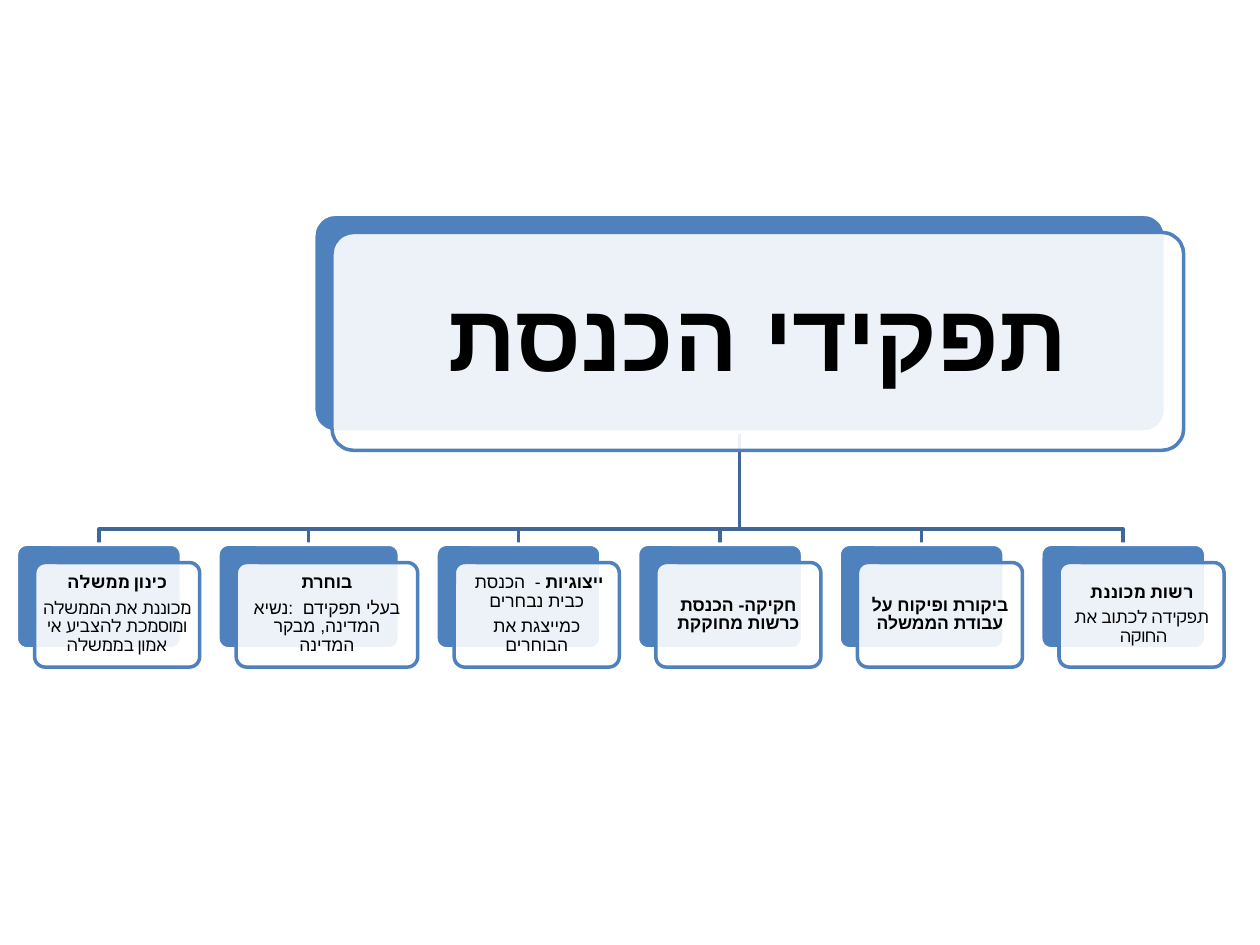
from dataclasses import dataclass

from lxml.etree import SubElement
from pptx import Presentation
from pptx.dml.color import RGBColor
from pptx.enum.shapes import MSO_SHAPE
from pptx.enum.text import MSO_ANCHOR, PP_ALIGN
from pptx.oxml.ns import qn
from pptx.util import Inches, Pt


@dataclass(frozen=True)
class Theme:
    """Hold the colours, type sizes and line width."""
    blue: RGBColor = RGBColor(0x4F, 0x81, 0xBD)
    wire: RGBColor = RGBColor(0x3F, 0x67, 0x97)
    white: RGBColor = RGBColor(0xFF, 0xFF, 0xFF)
    black: RGBColor = RGBColor(0, 0, 0)
    big: int = 54
    small: int = 10
    stroke: int = 2
    alpha: int = 90
    after: float = 0.35


THEME = Theme()
SHIFT = 0.145
ROOT = (2.49, 1.7, 6.76, 1.73)
LEFT, TOP, TALL, GAP = 0.13, 4.32, 0.83, 0.29
BUS = 4.2
TITLE = [(False, [("תפקידי הכנסת", True)])]
ROLES = [
    (1.31, "Calibri", [
        (True, [("כינון ממשלה", True)]),
        (True, [("מכוננת את הממשלה ומוסמכת להצביע אי אמון בממשלה", False)])]),
    (1.44, "Arial", [
        (True, [("בוחרת", True)]),
        (False, [("בעלי תפקידם  :נשיא המדינה, מבקר המדינה", False)])]),
    (1.31, "Arial", [
        (True, [("ייצוגיות ", True), ("-  הכנסת  כבית נבחרים", False)]),
        (True, [("כמייצגת את הבוחרים", False)])]),
    (1.31, "Arial", [(False, [("חקיקה- הכנסת כרשות מחוקקת", True)])]),
    (1.31, "Arial", [(False, [("ביקורת ופיקוח על עבודת הממשלה", True)])]),
    (1.31, "Calibri", [
        (True, [("רשות מכוננת", True)]),
        (True, [("תפקידה לכתוב את החוקה ", False)])]),
]


def apply(item, values):
    """Set each named value on the item."""
    for name, value in values.items():
        setattr(item, name, value)


def add_box(slide, area, fill, line):
    """Add a rounded box with a plain fill and outline."""
    box = slide.shapes.add_shape(MSO_SHAPE.ROUNDED_RECTANGLE, *map(Inches, area))
    box.adjustments[0] = 0.1
    box.shadow.inherit = False
    box.fill.solid()
    box.fill.fore_color.rgb = fill
    box.line.color.rgb = line
    box.line.width = Pt(THEME.stroke)
    return box


def add_text(box, paras, font, size, inset):
    """Write centred paragraphs into the box."""
    frame = box.text_frame
    sides = ("left", "top", "right", "bottom")
    apply(frame, {f"margin_{side}": Inches(inset) for side in sides})
    apply(frame, {"word_wrap": True, "vertical_anchor": MSO_ANCHOR.MIDDLE})
    for index, (rtl, runs) in enumerate(paras):
        para = frame.add_paragraph() if index else frame.paragraphs[0]
        apply(para, {"alignment": PP_ALIGN.CENTER, "line_spacing": 0.9,
                     "space_after": Pt(size * THEME.after)})
        if rtl:
            para._p.get_or_add_pPr().set("rtl", "1")
        for text, bold in runs:
            run = para.add_run()
            run.text = text
            apply(run.font, {"name": font, "size": Pt(size), "bold": bold})
            run.font.color.rgb = THEME.black
            SubElement(run.font._element, qn("a:cs"), typeface=font)


def add_card(slide, area, paras, font, size, inset):
    """Add a blue back box and a clear front box with text."""
    add_box(slide, area, THEME.blue, THEME.white)
    left, top, wide, tall = area
    front = add_box(slide, (left + SHIFT, top + SHIFT, wide, tall),
                    THEME.white, THEME.blue)
    shade = front.element.spPr.find(qn("a:solidFill"))[0]
    SubElement(shade, qn("a:alpha"), val=str(THEME.alpha * 1000))
    add_text(front, paras, font, size, inset)


def add_wire(slide, start, end):
    """Add a bent line from the root down to a card."""
    points = [(start[0], BUS), (end[0], BUS), end]
    pen = slide.shapes.build_freeform(*map(Inches, start))
    pen.add_line_segments([(Inches(x), Inches(y)) for x, y in points], close=False)
    wire = pen.convert_to_shape()
    wire.shadow.inherit = False
    wire.fill.background()
    wire.line.color.rgb = THEME.wire
    wire.line.width = Pt(THEME.stroke)


def lay_out():
    """Return the card areas from left to right."""
    areas, left = [], LEFT
    for wide, _, _ in ROLES:
        areas.append((left, TOP, wide, TALL))
        left += wide + GAP
    return areas


def main():
    """Build the chart of roles and save it."""
    deck = Presentation()
    apply(deck, {"slide_width": Inches(10), "slide_height": Inches(7.5)})
    slide = deck.slides.add_slide(deck.slide_layouts[6])
    areas = lay_out()
    start = (ROOT[0] + ROOT[2] / 2, ROOT[1] + ROOT[3])
    for left, top, wide, _ in reversed(areas):
        add_wire(slide, start, (left + wide / 2, top))
    add_card(slide, ROOT, TITLE, "Arial", THEME.big, 0.23)
    for area, (_, font, paras) in zip(areas, ROLES):
        add_card(slide, area, paras, font, THEME.small, 0.04)
    deck.save("out.pptx")


if __name__ == "__main__":
    main()
